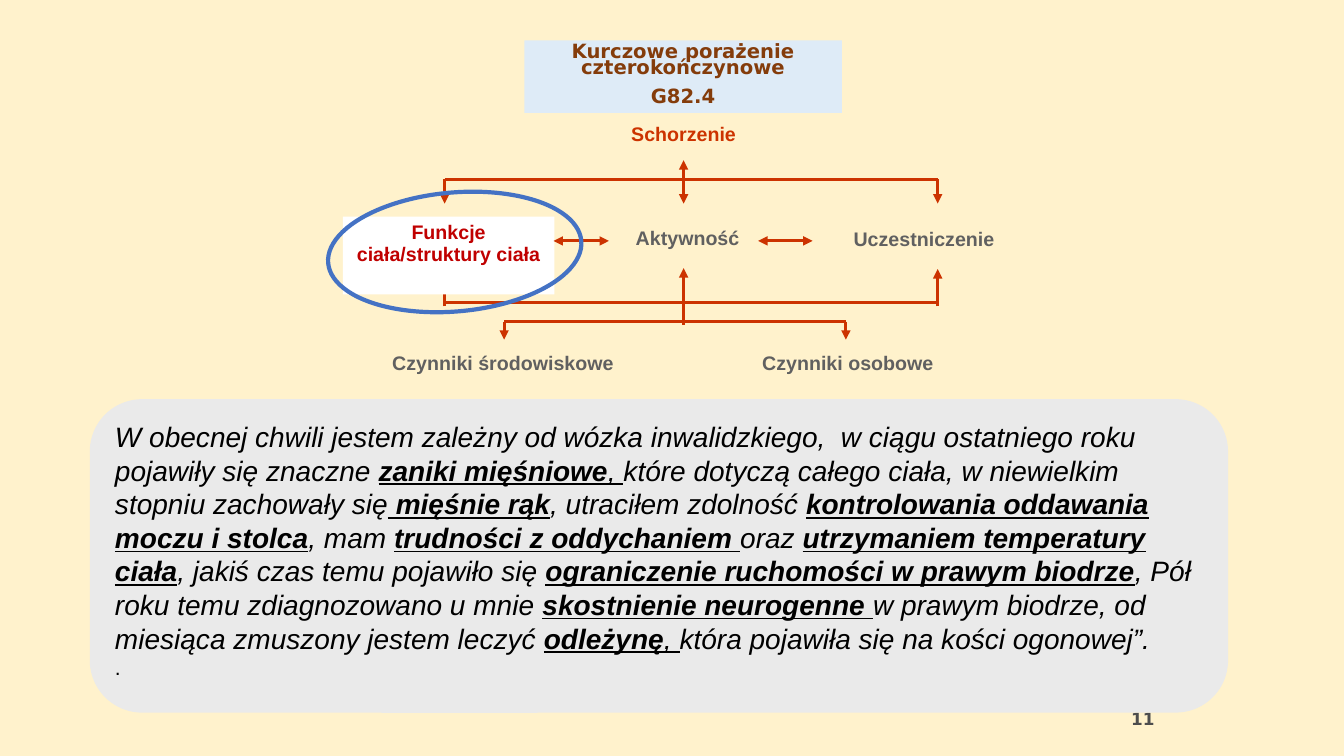
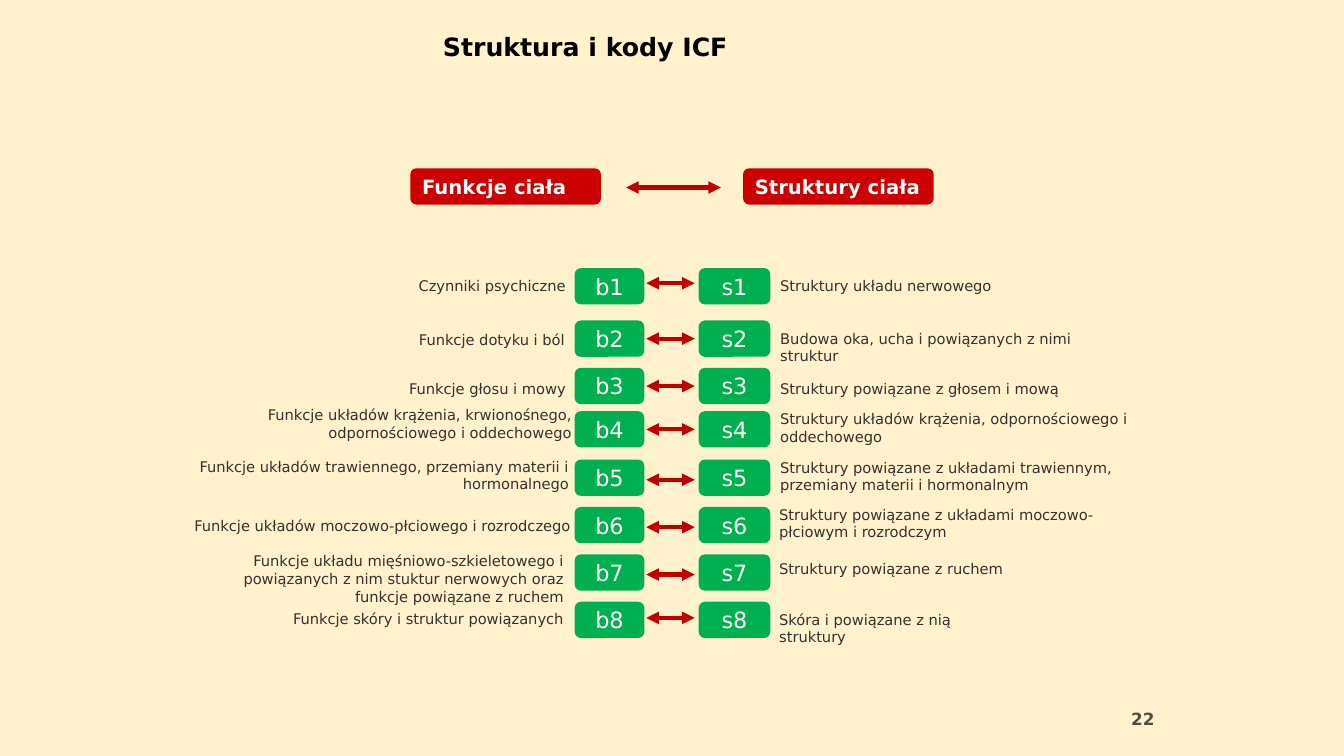
"""Build two slides about the ICF model and its body function and structure codes."""
from lxml import etree
from pptx import Presentation
from pptx.dml.color import RGBColor
from pptx.enum.shapes import MSO_CONNECTOR, MSO_SHAPE as SHAPE
from pptx.enum.text import MSO_ANCHOR as ANCHOR, PP_ALIGN as ALIGN
from pptx.oxml.ns import qn
from pptx.util import Inches, Pt

CREAM, WHITE, BLACK = "FFF2CC", "FFFFFF", "000000"
ORANGE, RED, DARK_RED, GREEN = "CC3300", "CC0000", "C00000", "00B050"
GRAY, DARK_GRAY, TEXT_GRAY, PALE_GRAY = "606060", "4D4D4D", "333333", "EAEAEA"
BLUE, PALE_BLUE, BROWN = "4472C4", "DEEBF7", "843C0B"
SANS, ARIAL = "DejaVu Sans", "Arial"


def add_box(page, place, lines=(), size=14, color=BLACK, font=SANS, bold=False,
            align=ALIGN.CENTER, anchor=ANCHOR.TOP, spacing=None, before=0,
            shape=None, fill=None):
    place = [Inches(length) for length in place]
    if shape is None:
        box = page.shapes.add_textbox(*place)
    else:
        box = page.shapes.add_shape(shape, *place)
        box.shadow.inherit = False
        box.line.fill.background()
    if fill:
        box.fill.solid()
        box.fill.fore_color.rgb = RGBColor.from_string(fill)
    else:
        box.fill.background()
    frame = box.text_frame
    frame.word_wrap = True
    frame.vertical_anchor = anchor
    for index, line in enumerate(lines):
        para = frame.add_paragraph() if index else frame.paragraphs[0]
        para.alignment = align
        para.line_spacing = spacing
        para.space_before = Pt(before)
        runs = [(line, "b" if bold else "")] if isinstance(line, str) else line
        for text, style in runs:
            span = para.add_run()
            span.text = text
            span.font.name = font
            span.font.size = Pt(size)
            span.font.color.rgb = RGBColor.from_string(color)
            span.font.bold = "b" in style
            span.font.italic = "i" in style
            span.font.underline = "u" in style
    return box


def add_line(page, start, end, color=ORANGE, width=2.25, heads=()):
    line = page.shapes.add_connector(
        MSO_CONNECTOR.STRAIGHT, *[Inches(length) for length in start + end])
    line.line.color.rgb = RGBColor.from_string(color)
    line.line.width = Pt(width)
    for head in heads:
        etree.SubElement(line.line._get_or_add_ln(), qn(f"a:{head}"), type="triangle")
    etree.SubElement(line._element.spPr, qn("a:effectLst"))
    return line


ONE_WAY, TWO_WAY = ("tailEnd",), ("headEnd", "tailEnd")

deck = Presentation()
deck.slide_width, deck.slide_height = Inches(13.33), Inches(7.5)
backdrop = deck.slide_master.background.fill
backdrop.solid()
backdrop.fore_color.rgb = RGBColor.from_string(CREAM)

pages = []
for number in ("11", "22"):
    page = deck.slides.add_slide(deck.slide_layouts[6])
    add_box(page, (9.22, 6.98, 2.33, 0.52), [number], 12, DARK_GRAY, bold=True,
            align=ALIGN.RIGHT)
    pages.append(page)
model_page, codes_page = pages

story = [
    ("W obecnej chwili jestem zależny od wózka inwalidzkiego,  w ciągu ostatniego "
     "roku pojawiły się znaczne ", "i"),
    ("zaniki mięśniowe", "biu"),
    (", ", "iu"),
    ("które dotyczą całego ciała, w niewielkim stopniu zachowały się", "i"),
    (" ", "iu"),
    ("mięśnie rąk", "biu"),
    (", utraciłem zdolność ", "i"),
    ("kontrolowania oddawania moczu i stolca", "biu"),
    (", mam ", "i"),
    ("trudności z oddychaniem", "biu"),
    (" ", "iu"),
    ("oraz ", "i"),
    ("utrzymaniem temperatury ciała", "biu"),
    (", jakiś czas temu pojawiło się ", "i"),
    ("ograniczenie ruchomości w prawym biodrze", "biu"),
    (", Pół roku temu zdiagnozowano u mnie ", "i"),
    ("skostnienie neurogenne ", "biu"),
    ("w prawym biodrze, od miesiąca zmuszony jestem leczyć ", "i"),
    ("odleżynę", "biu"),
    (", ", "iu"),
    ("która pojawiła się na kości ogonowej”.", "i"),
]
callout = add_box(model_page, (0.89, 3.96, 11.29, 3.11), [story, "."], 20, font=ARIAL,
                  align=ALIGN.LEFT, shape=SHAPE.ROUNDED_RECTANGULAR_CALLOUT,
                  fill=PALE_GRAY)
for index, value in enumerate((-0.135, 0.501, 0.167)):
    callout.adjustments[index] = value
callout.text_frame.paragraphs[1].runs[0].font.size = Pt(15)

left, middle, right = 4.41, 6.78, 9.3
for y in (1.78, 3.0):
    add_line(model_page, (left, y), (right, y))
for x in (left, right):
    add_line(model_page, (x, 1.78), (x, 2.02), heads=ONE_WAY)
    add_line(model_page, (x, 3.04), (x, 2.67), heads=ONE_WAY)
add_line(model_page, (middle, 1.59), (middle, 2.02), heads=TWO_WAY)
add_line(model_page, (middle, 3.22), (middle, 2.66), heads=ONE_WAY)
add_line(model_page, (5, 3.19), (8.39, 3.19))
for x in (5, 8.39):
    add_line(model_page, (x, 3.19), (x, 3.37), heads=ONE_WAY)

for text, place, color in (
    ("Schorzenie", (5.34, 1.16, 2.88, 0.34), ORANGE),
    ("Czynniki środowiskowe", (3.55, 3.43, 2.88, 0.57), GRAY),
    ("Czynniki osobowe", (7.05, 3.43, 2.72, 0.34), GRAY),
):
    add_box(model_page, place, [text], color=color, font=ARIAL, bold=True)

add_box(model_page, (3.4, 2.15, 2.1, 0.77), ["Funkcje ciała/struktury ciała"],
        color=DARK_RED, font=ARIAL, bold=True, spacing=0.95, shape=SHAPE.RECTANGLE,
        fill=WHITE)
for text, place, start in (
    ("Aktywność", (6.04, 2.21, 1.56, 0.36), 5.49),
    ("Uczestniczenie", (8.06, 2.22, 2.21, 0.34), 7.52),
):
    label = add_box(model_page, place, [text], color=GRAY, font=ARIAL, bold=True,
                    spacing=0.95)
    arrow = add_line(model_page, (start, 2.39), (place[0], 2.39), heads=TWO_WAY)
    arrow.end_connect(label, 1)

ring = add_box(model_page, (3.25, 1.91, 2.52, 1.18), shape=SHAPE.OVAL)
ring.rotation = 355
ring.line.color.rgb = RGBColor.from_string(BLUE)
ring.line.width = Pt(3)
add_box(model_page, (5.2, 0.4, 3.15, 0.72),
        ["Kurczowe porażenie czterokończynowe", "G82.4"], color=BROWN, bold=True,
        spacing=0.7, before=8.8, shape=SHAPE.RECTANGLE, fill=PALE_BLUE)

add_box(codes_page, (1.9, -0.16, 7.81, 1.25), ["Struktura i kody ICF"], 18, bold=True,
        anchor=ANCHOR.MIDDLE)
for text, x in (("Funkcje ciała", 4.07), ("Struktury ciała", 7.37)):
    add_box(codes_page, (x, 1.67, 1.89, 0.36), [text], color=WHITE, bold=True,
            align=ALIGN.LEFT, anchor=ANCHOR.MIDDLE, shape=SHAPE.ROUNDED_RECTANGLE,
            fill=RED)
add_line(codes_page, (6.21, 1.86), (7.15, 1.86), DARK_RED, 3, TWO_WAY)

FIXED = Pt(12.5)
rows = [
    (2.66, 2.81,
     "Czynniki psychiczne", (1.47, 2.66, 4.24, 0.3), 1.2,
     "Struktury układu nerwowego", (7.64, 2.7, 3.83, 0.27), FIXED),
    (3.18, 3.36,
     "Funkcje dotyku i ból", (2.42, 3.16, 3.28, 0.33), 1.4,
     "Budowa oka, ucha i powiązanych z nimi struktur", (7.64, 3.22, 3.59, 0.47), FIXED),
    (3.65, 3.83,
     "Funkcje głosu i mowy", (1.96, 3.65, 3.75, 0.33), 1.4,
     "Struktury powiązane z głosem i mową", (7.64, 3.72, 3.59, 0.27), FIXED),
    (4.08, 4.26,
     "Funkcje układów krążenia, krwionośnego, odpornościowego i oddechowego",
     (1.55, 3.98, 4.22, 0.47), None,
     "Struktury układów krążenia, odpornościowego i oddechowego",
     (7.64, 4.02, 3.67, 0.47), FIXED),
    (4.56, 4.76,
     "Funkcje układów trawiennego, przemiany materii i hormonalnego",
     (1.52, 4.49, 4.22, 0.47), None,
     "Struktury powiązane z układami trawiennym, przemiany materii i hormonalnym",
     (7.64, 4.5, 3.67, 0.46), None),
    (5.03, 5.23,
     "Funkcje układów moczowo-płciowego i rozrodczego", (1.78, 5.04, 3.98, 0.29), 1.2,
     "Struktury powiązane z układami moczowo-płciowym i rozrodczym",
     (7.63, 4.97, 3.59, 0.47), FIXED),
    (5.5, 5.7,
     "Funkcje układu mięśniowo-szkieletowego i powiązanych z nim stuktur nerwowych "
     "oraz funkcje powiązane z ruchem", (1.78, 5.43, 3.91, 0.66), None,
     "Struktury powiązane z ruchem", (7.63, 5.51, 3.67, 0.27), FIXED),
    (5.97, 6.13,
     "Funkcje skóry i struktur powiązanych", (1.78, 6, 3.91, 0.27), FIXED,
     "Skóra i powiązane z nią struktury", (7.63, 6.01, 2.58, 0.47), FIXED),
]
for number, row in enumerate(rows, 1):
    (top, arrow_y, function, function_place, function_spacing,
     structure, structure_place, structure_spacing) = row
    for letter, x, width in (("b", 5.7, 0.69), ("s", 6.93, 0.71)):
        add_box(codes_page, (x, top, width, 0.36), [f"{letter}{number}"], 16, WHITE,
                anchor=ANCHOR.MIDDLE, shape=SHAPE.ROUNDED_RECTANGLE, fill=GREEN)
    add_line(codes_page, (6.41, arrow_y), (6.89, arrow_y), DARK_RED, 3, TWO_WAY)
    add_box(codes_page, function_place, [function], 10.5, TEXT_GRAY, align=ALIGN.RIGHT,
            spacing=function_spacing)
    add_box(codes_page, structure_place, [structure], 10.5, TEXT_GRAY, align=ALIGN.LEFT,
            spacing=structure_spacing)

deck.save("out.pptx")
